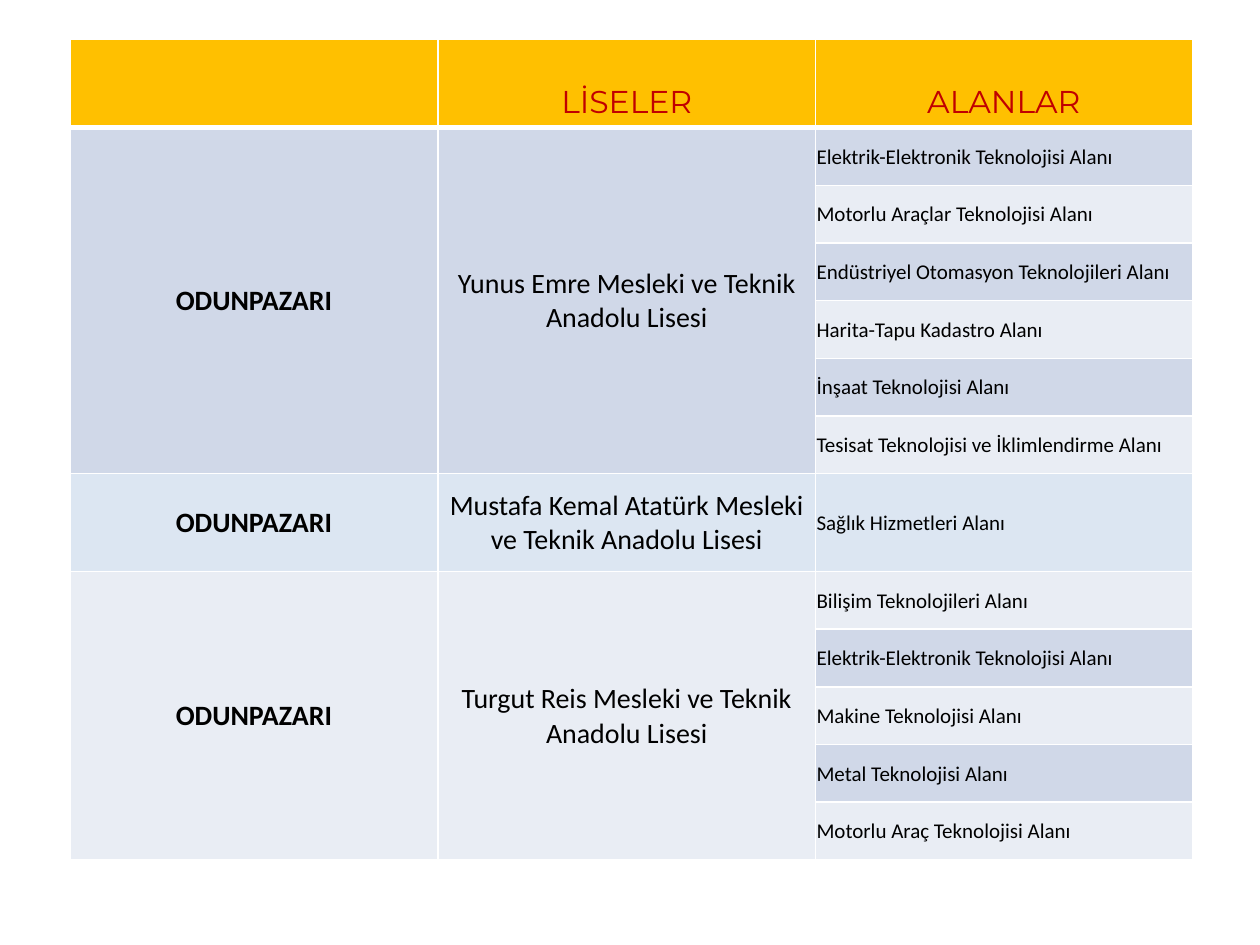
from pptx import Presentation
from pptx.dml.color import RGBColor
from pptx.enum.text import MSO_ANCHOR, PP_ALIGN
from pptx.oxml.ns import qn
from pptx.util import Pt
from lxml import etree

LEFT, CENTER = PP_ALIGN.LEFT, PP_ALIGN.CENTER
MIDDLE, BOTTOM = MSO_ANCHOR.MIDDLE, MSO_ANCHOR.BOTTOM

COLORS = {
    "header": "FFC000",
    "heading": "C00000",
    "text": "000000",
    "border": "FFFFFF",
    "dark": "D0D8E8",
    "light": "E9EDF4",
    "single": "DCE6F2",
}

HEADINGS = ["", "LİSELER", "ALANLAR"]
DISTRICT = "ODUNPAZARI"

# Each school: name, the fills its rows alternate between, its fields
SCHOOLS = [
    ("Yunus Emre Mesleki ve Teknik Anadolu Lisesi", ["dark", "light"], [
        "Elektrik-Elektronik Teknolojisi Alanı",
        "Motorlu Araçlar Teknolojisi Alanı",
        "Endüstriyel Otomasyon Teknolojileri Alanı",
        "Harita-Tapu Kadastro Alanı",
        "İnşaat Teknolojisi Alanı",
        "Tesisat Teknolojisi ve İklimlendirme Alanı",
    ]),
    ("Mustafa Kemal Atatürk Mesleki ve Teknik Anadolu Lisesi", ["single"], [
        "Sağlık Hizmetleri Alanı",
    ]),
    ("Turgut Reis Mesleki ve Teknik Anadolu Lisesi", ["light", "dark"], [
        "Bilişim Teknolojileri Alanı",
        "Elektrik-Elektronik Teknolojisi Alanı",
        "Makine Teknolojisi Alanı",
        "Metal Teknolojisi Alanı",
        "Motorlu Araç Teknolojisi Alanı",
    ]),
]

COLUMN_WIDTHS = [210.5, 215.5, 215.5]
HEADER_HEIGHT, FIELD_HEIGHT, SINGLE_HEIGHT = 50.4, 32.95, 56


class SlideBuilder:
    """Holds the style and the current slide."""

    body_font = "Calibri"
    heading_font = "Montserrat"

    def __init__(self, slide):
        self.slide = slide

    def table(self, left, top, widths, heights):
        frame = self.slide.shapes.add_table(
            len(heights), len(widths), Pt(left), Pt(top),
            Pt(sum(widths)), Pt(sum(heights)))
        table = frame.table
        for column, width in zip(table.columns, widths):
            column.width = Pt(width)
        for row, height in zip(table.rows, heights):
            row.height = Pt(height)
        return table

    def borders(self, cell, bottom=1):
        properties = cell._tc.get_or_add_tcPr()
        for side, width in (("L", 1), ("R", 1), ("T", 1), ("B", bottom)):
            line = etree.SubElement(properties, qn(f"a:ln{side}"), w=str(Pt(width)))
            fill = etree.SubElement(line, qn("a:solidFill"))
            etree.SubElement(fill, qn("a:srgbClr"), val=COLORS["border"])

    def paint(self, cell, fill):
        cell.fill.solid()
        cell.fill.fore_color.rgb = RGBColor.from_string(COLORS[fill])

    def set_text(self, cell, text, size, font, color, align, bold=False):
        cell.text_frame.text = text
        para = cell.text_frame.paragraphs[0]
        para.alignment = align
        for span in para.runs:
            span.font.size = Pt(size)
            span.font.name = font
            span.font.bold = bold
            span.font.color.rgb = RGBColor.from_string(COLORS[color])

    def heading_cell(self, cell, text):
        self.borders(cell, bottom=3)
        self.paint(cell, "header")
        cell.vertical_anchor = BOTTOM
        self.set_text(cell, text, 18, self.heading_font, "heading", CENTER)

    def body_cell(self, cell, text, fill, size=16, align=CENTER, bold=False):
        self.borders(cell)
        self.paint(cell, fill)
        cell.vertical_anchor = MIDDLE
        cell.margin_left = cell.margin_right = cell.margin_top = Pt(0.75)
        cell.margin_bottom = Pt(0)
        self.set_text(cell, text, size, self.body_font, "text", align, bold)


def main():
    deck = Presentation()
    deck.slide_width, deck.slide_height = Pt(720), Pt(540)
    page = SlideBuilder(deck.slides.add_slide(deck.slide_layouts[6]))

    # Grid: a school with one field gets a taller row
    heights = [HEADER_HEIGHT]
    for _, _, fields in SCHOOLS:
        height = FIELD_HEIGHT if len(fields) > 1 else SINGLE_HEIGHT
        heights += [height] * len(fields)
    table = page.table(39.9, 22.6, COLUMN_WIDTHS, heights)

    # Header row
    for column, heading in enumerate(HEADINGS):
        page.heading_cell(table.cell(0, column), heading)

    # One block of rows per school
    first = 1
    for school, fills, fields in SCHOOLS:
        last = first + len(fields) - 1
        for offset, field in enumerate(fields):
            row = first + offset
            is_first = offset == 0
            page.body_cell(table.cell(row, 0), DISTRICT if is_first else "",
                           fills[0], bold=True)
            page.body_cell(table.cell(row, 1), school if is_first else "", fills[0])
            page.body_cell(table.cell(row, 2), field, fills[offset % len(fills)],
                           size=12, align=LEFT)
        if last > first:
            for column in (0, 1):
                table.cell(first, column).merge(table.cell(last, column))
        first = last + 1

    deck.save("out.pptx")


if __name__ == "__main__":
    main()
